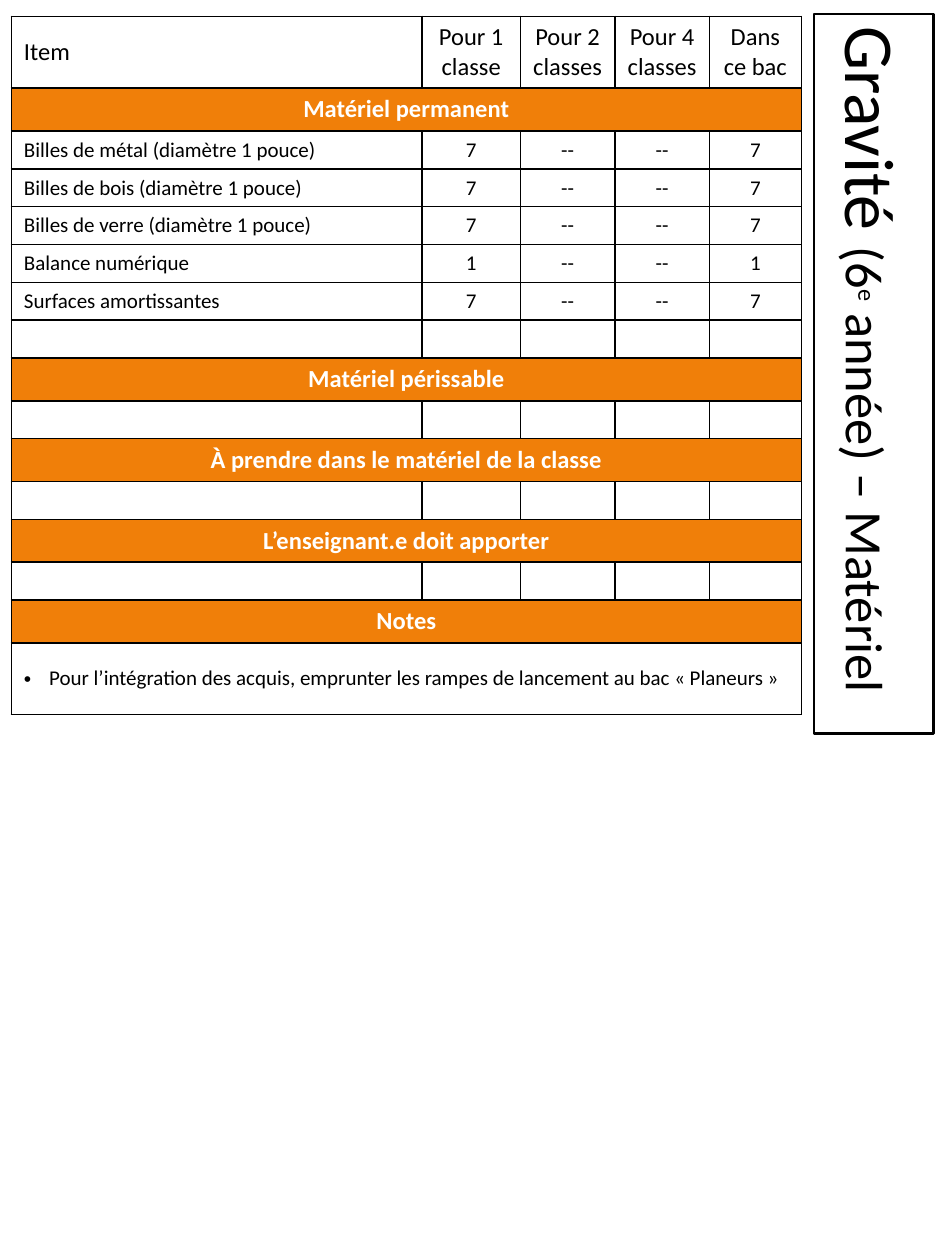
from lxml.etree import SubElement as Sub
from pptx import Presentation
from pptx.dml.color import RGBColor
from pptx.enum.text import MSO_ANCHOR as Anchor, PP_ALIGN as Align
from pptx.oxml.ns import qn
from pptx.util import Inches, Pt

BLACK = RGBColor(0, 0, 0)
WHITE = RGBColor(255, 255, 255)
ORANGE = RGBColor(0xF0, 0x7F, 0x09)
COLS = [3.26, 0.78, 0.75, 0.75, 0.73]
TALL = {"head": 0.57, "band": 0.34, "item": 0.3, "note": 0.57}
BASE = {"name": "Calibri", "bold": False}
FONTS = {
    "head": {**BASE, "size": Pt(14)},
    "band": {**BASE, "size": Pt(14), "bold": True},
    "item": {**BASE, "size": Pt(12)},
    "note": {**BASE, "size": Pt(12)},
}
EMPTY = ("item", [""] * 5)
ROWS = [
    ("head", ["Item", "Pour 1 classe", "Pour 2 classes", "Pour 4 classes", "Dans ce bac"]),
    ("band", ["Matériel permanent"]),
    ("item", ["Billes de métal (diamètre 1 pouce)", "7", "--", "--", "7"]),
    ("item", ["Billes de bois (diamètre 1 pouce)", "7", "--", "--", "7"]),
    ("item", ["Billes de verre (diamètre 1 pouce)", "7", "--", "--", "7"]),
    ("item", ["Balance numérique", "1", "--", "--", "1"]),
    ("item", ["Surfaces amortissantes", "7", "--", "--", "7"]),
    EMPTY,
    ("band", ["Matériel périssable"]),
    EMPTY,
    ("band", ["À prendre dans le matériel de la classe"]),
    EMPTY,
    ("band", ["L’enseignant.e doit apporter"]),
    EMPTY,
    ("band", ["Notes"]),
    ("note", ["Pour l’intégration des acquis, emprunter les rampes de lancement "
              "au bac «\u00a0Planeurs\u00a0»"]),
]
TITLE = [("Gravité ", 40, 0), ("(6", 30, 0), ("e", 24, 30000), (" année) – Matériel", 30, 0)]


def style(font, form, color):
    """Apply format values and a colour to a font."""
    for key, val in form.items():
        setattr(font, key, val)
    font.color.rgb = color


def frame(cell):
    """Draw thin black borders round a cell."""
    props = cell._tc.get_or_add_tcPr()
    for side in ("a:lnL", "a:lnR", "a:lnT", "a:lnB"):
        line = Sub(props, qn(side), w=str(Pt(1)))
        Sub(Sub(line, qn("a:solidFill")), qn("a:srgbClr"), val=str(BLACK))


def write(cell, text, kind, col):
    """Fill a cell with text in the manner of its row."""
    cell.vertical_anchor = Anchor.MIDDLE
    para = cell.text_frame.paragraphs[0]
    if not text:
        Sub(para._p, qn("a:endParaRPr"), sz=str(int(FONTS[kind]["size"].pt * 100)))
        return
    if kind == "note":
        props = para._p.get_or_add_pPr()
        props.set("marL", str(Inches(0.2)))
        props.set("indent", str(-Inches(0.2)))
        Sub(props, qn("a:buFont"), typeface="Arial")
        Sub(props, qn("a:buChar"), char="•")
    para.alignment = Align.CENTER if kind == "band" or col else Align.LEFT
    run = para.add_run()
    run.text = text
    style(run.font, FONTS[kind], WHITE if kind == "band" else BLACK)


def add_list(slide, left, top, width):
    """Place the material table with its columns scaled to the width."""
    high = sum(TALL[kind] for kind, _ in ROWS)
    table = slide.shapes.add_table(
        len(ROWS), len(COLS), Inches(left), Inches(top), Inches(width), Inches(high)).table
    table.first_row = table.horz_banding = False
    for col, share in zip(table.columns, COLS):
        col.width = Inches(width * share / sum(COLS))
    for num, (kind, texts) in enumerate(ROWS):
        table.rows[num].height = Inches(TALL[kind])
        cells = [table.cell(num, col) for col in range(len(COLS))]
        for cell in cells:
            frame(cell)
            if kind == "band":
                cell.fill.solid()
                cell.fill.fore_color.rgb = ORANGE
            else:
                cell.fill.background()
        if len(texts) == 1:
            cells[0].merge(cells[-1])
        for col, text in enumerate(texts):
            write(cells[col], text, kind, col)


def add_title(slide, left, top, width, height):
    """Place the title turned a quarter to fill an upright box."""
    box = slide.shapes.add_textbox(
        Inches(left + (width - height) / 2), Inches(top + (height - width) / 2),
        Inches(height), Inches(width))
    box.rotation = 90
    box.line.color.rgb = BLACK
    box.line.width = Pt(1.5)
    body = box.text_frame
    body.word_wrap = True
    body.vertical_anchor = Anchor.MIDDLE
    for text, size, lift in TITLE:
        run = body.paragraphs[0].add_run()
        run.text = text
        style(run.font, {**BASE, "size": Pt(size)}, BLACK)
        if lift:
            run.font._element.set("baseline", str(lift))


def main():
    """Build the slide and save it."""
    deck = Presentation()
    deck.slide_width, deck.slide_height = Inches(7.5), Inches(10)
    slide = deck.slides.add_slide(deck.slide_layouts[6])
    add_title(slide, 6.46, 0.11, 0.95, 5.71)
    add_list(slide, 0.09, 0.13, sum(COLS))
    deck.save("out.pptx")


if __name__ == "__main__":
    main()
